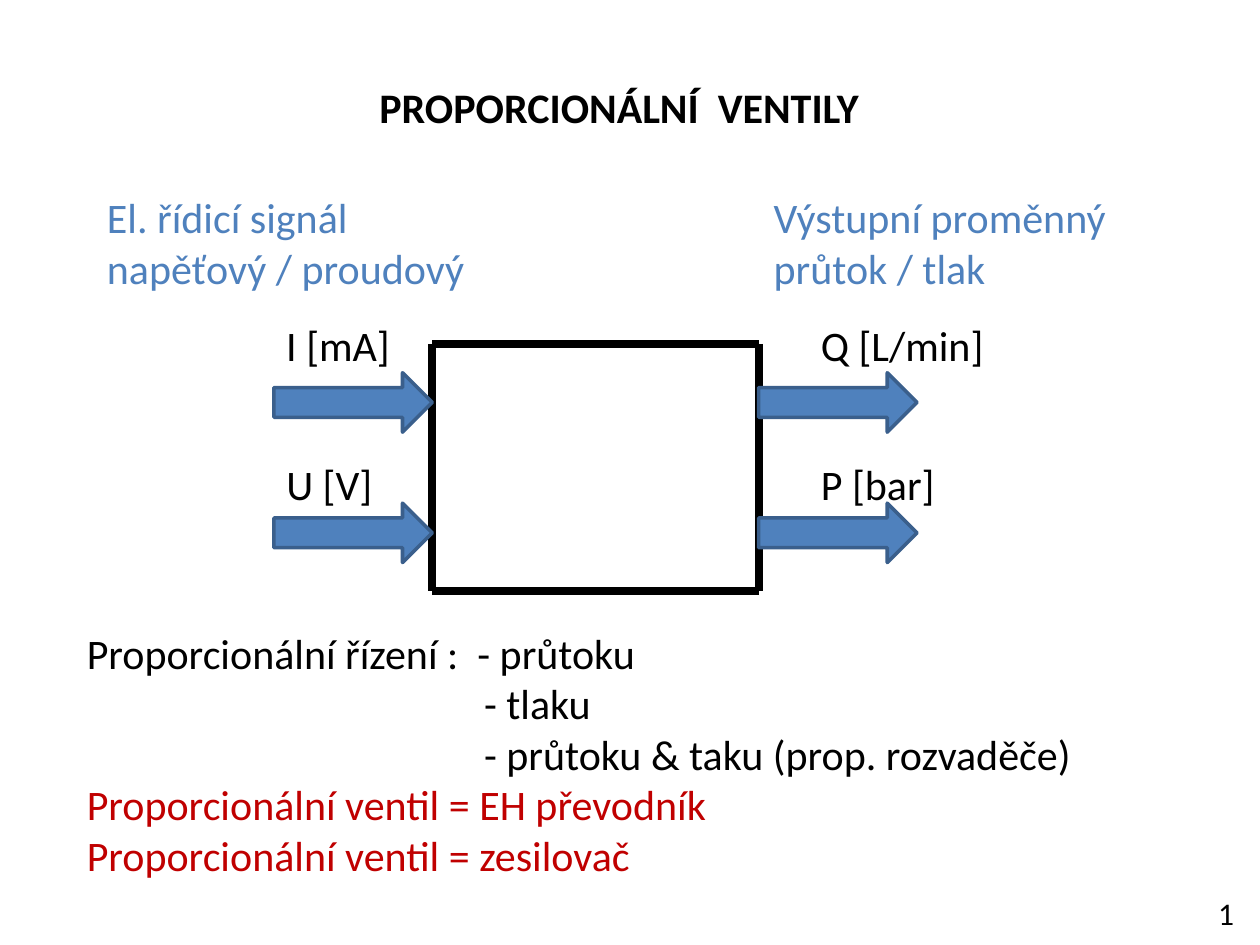
from itertools import product

from pptx import Presentation
from pptx.dml.color import RGBColor
from pptx.enum.shapes import MSO_CONNECTOR as CONNECTOR, MSO_SHAPE as SHAPE
from pptx.enum.text import MSO_AUTO_SIZE as AUTO_SIZE, PP_ALIGN as ALIGN
from pptx.util import Pt
from lxml.etree import SubElement
from pptx.oxml.ns import qn

BLACK, BLUE, DARK_BLUE, RED = "000000", "4F81BD", "3A5F8C", "C00000"
LIST_INDENT = 227

# Texts: left, top, width, height, lines
TITLE = (76.5, 43, 554.5, 36, ["PROPORCIONÁLNÍ  VENTILY"])
HEADINGS = [
    (54, 106, 300, 65.5, ["El. řídicí signál", "napěťový / proudový"]),
    (435, 106, 254, 65.5, ["Výstupní proměnný", "průtok / tlak"]),
]
SIGNALS = [
    (156.5, 179, 113, 36, ["I [mA]"]),
    (156.5, 258.5, 68, 36, ["U [V]"]),
    (462, 179, 119, 36, ["Q [L/min]"]),
    (462, 258.5, 91, 36, ["P [bar]"]),
]
SUMMARY = (42.5, 355, 646.5, 152.5, [
    "Proporcionální řízení :  - průtoku",
    "- tlaku",
    "- průtoku & taku (prop. rozvaděče)",
    "Proporcionální ventil = EH převodník",
    "Proporcionální ventil = zesilovač",
])
PAGE_NUMBER = (689, 507.5, 26, 29, ["1"])

VALVE_LEFT, VALVE_TOP, VALVE_RIGHT, VALVE_BOTTOM = 247, 196.5, 433.5, 337.5
ARROW_WIDTH, ARROW_HEIGHT = 90.5, 34
ARROW_TOPS = (213, 287.5)


def color(hex_code):
    return RGBColor.from_string(hex_code)


def add_text(slide, block, text_color=BLACK, size=24):
    *box, lines = block
    frame = slide.shapes.add_textbox(*map(Pt, box)).text_frame
    frame.word_wrap = True
    frame.auto_size = AUTO_SIZE.SHAPE_TO_FIT_TEXT
    frame.text = "\n".join(lines)
    for paragraph in frame.paragraphs:
        font = paragraph.font
        font.name, font.size = "Calibri", Pt(size)
        font.color.rgb = color(text_color)
    return frame.paragraphs


def add_edge(slide, start, end):
    edge = slide.shapes.add_connector(CONNECTOR.STRAIGHT, *map(Pt, start + end))
    edge.line.color.rgb = color(BLACK)
    edge.line.width = Pt(4.5)
    SubElement(edge._element.spPr, qn("a:effectLst"))


def add_arrow(slide, left, top):
    arrow = slide.shapes.add_shape(
        SHAPE.RIGHT_ARROW, *map(Pt, (left, top, ARROW_WIDTH, ARROW_HEIGHT)))
    arrow.shadow.inherit = False
    arrow.fill.solid()
    arrow.fill.fore_color.rgb = color(BLUE)
    arrow.line.color.rgb = color(DARK_BLUE)
    arrow.line.width = Pt(2)


def main():
    deck = Presentation()
    deck.slide_width, deck.slide_height = Pt(720), Pt(540)
    slide = deck.slides.add_slide(deck.slide_layouts[6])

    corners = [(VALVE_LEFT, VALVE_TOP), (VALVE_RIGHT, VALVE_TOP),
               (VALVE_RIGHT, VALVE_BOTTOM), (VALVE_LEFT, VALVE_BOTTOM)]
    for start, end in zip(corners, corners[1:] + corners[:1]):
        add_edge(slide, start, end)
    for left, top in product((VALVE_LEFT - ARROW_WIDTH, VALVE_RIGHT), ARROW_TOPS):
        add_arrow(slide, left, top)

    title = add_text(slide, TITLE)[0]
    title.alignment = ALIGN.CENTER
    title.font.bold = True
    for heading in HEADINGS:
        add_text(slide, heading, BLUE)
    for signal in SIGNALS:
        add_text(slide, signal)

    summary = add_text(slide, SUMMARY)
    for item in summary[1:3]:
        item._p.get_or_add_pPr().set("marL", str(Pt(LIST_INDENT)))
    for conclusion in summary[3:]:
        conclusion.font.color.rgb = color(RED)
    add_text(slide, PAGE_NUMBER, size=18)

    deck.save("out.pptx")


if __name__ == "__main__":
    main()
